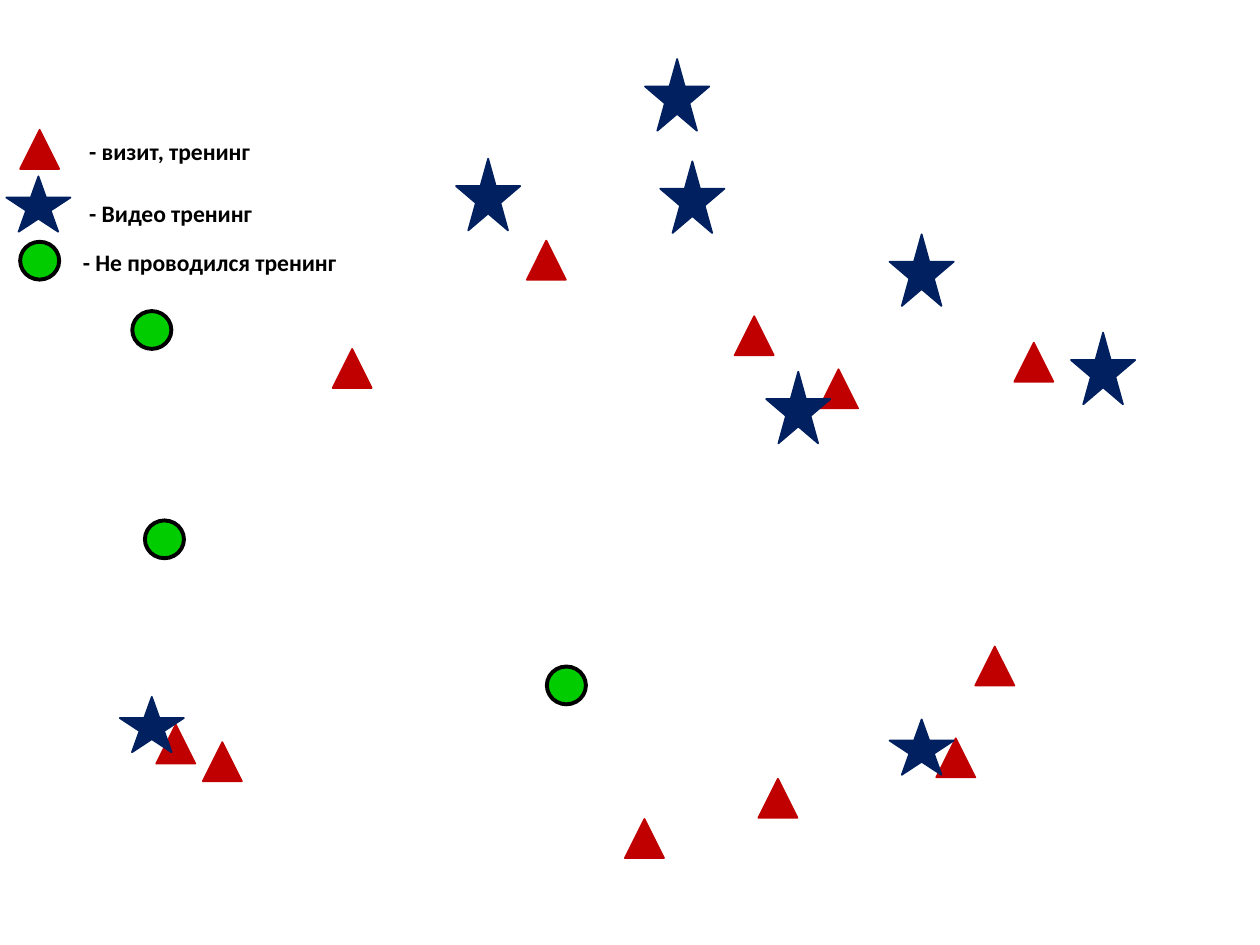
from pptx import Presentation
from pptx.dml.color import RGBColor
from pptx.enum.shapes import MSO_SHAPE
from pptx.enum.text import MSO_AUTO_SIZE
from pptx.util import Pt

TRIANGLE = MSO_SHAPE.ISOSCELES_TRIANGLE
STAR = MSO_SHAPE.STAR_5_POINT
CIRCLE = MSO_SHAPE.OVAL
GROW = MSO_AUTO_SIZE.SHAPE_TO_FIT_TEXT

RED = RGBColor(0xC0, 0x00, 0x00)
NAVY = RGBColor(0x00, 0x20, 0x60)
GREEN = RGBColor(0x00, 0xCC, 0x00)
BLACK = RGBColor(0x00, 0x00, 0x00)

VISITS = [
    (419.8, 180.7), (468, 211), (557.3, 369.4), (535, 421.9),
    (357.1, 468), (433.4, 445), (89.3, 414), (11.5, 74.2),
    (301, 137.5), (190.1, 199.4), (579.6, 195.8), (115.9, 424.1),
]
CALLS = [
    (437.8, 212.4), (368.6, 33.8), (260.6, 90.7),
    (508.3, 133.9), (377.3, 92.2), (612, 190.1),
]
LOW_CALLS = [(3.6, 100.8), (68.4, 398.2), (508.3, 411.1)]
UNTRAINED = [(82.8, 297.4), (312.5, 380.9), (11.5, 138.2), (75.6, 177.8)]

MARKS = [
    (TRIANGLE, VISITS, (22.3, 22.3), RED, RED, 1),
    (STAR, CALLS, (36.7, 41), NAVY, NAVY, 1),
    (STAR, LOW_CALLS, (36.7, 31.7), NAVY, NAVY, 1),
    (CIRCLE, UNTRAINED, (22.3, 21.6), GREEN, BLACK, 2.25),
]
LEGEND = [
    ("- визит, тренинг", 43.9, 74.9, 113.8),
    ("- Видео тренинг", 43.9, 110.2, 113.8),
    ("- Не проводился тренинг", 40.3, 138.2, 180),
]


def add_marks(slide, kind, spots, size, fill, edge, weight):
    """Draw one kind of map mark at each of its spots."""
    width, height = size
    for left, top in spots:
        mark = slide.shapes.add_shape(
            kind, Pt(left), Pt(top), Pt(width), Pt(height))
        mark.shadow.inherit = False
        mark.fill.solid()
        mark.fill.fore_color.rgb = fill
        mark.line.color.rgb = edge
        mark.line.width = Pt(weight)


def add_label(slide, text, left, top, width):
    """Write one bold legend label."""
    box = slide.shapes.add_textbox(Pt(left), Pt(top), Pt(width), Pt(23.8))
    frame = box.text_frame
    frame.word_wrap = True
    frame.auto_size = GROW
    line = frame.paragraphs[0]
    line.text = text
    line.font.name = "Calibri"
    line.font.size = Pt(13.5)
    line.font.bold = True
    line.font.color.rgb = BLACK


def main():
    """Build the training map slide and save it."""
    deck = Presentation()
    deck.slide_width, deck.slide_height = Pt(720), Pt(540)
    slide = deck.slides.add_slide(deck.slide_layouts[6])
    for group in MARKS:
        add_marks(slide, *group)
    for label in LEGEND:
        add_label(slide, *label)
    deck.save("out.pptx")


if __name__ == "__main__":
    main()
